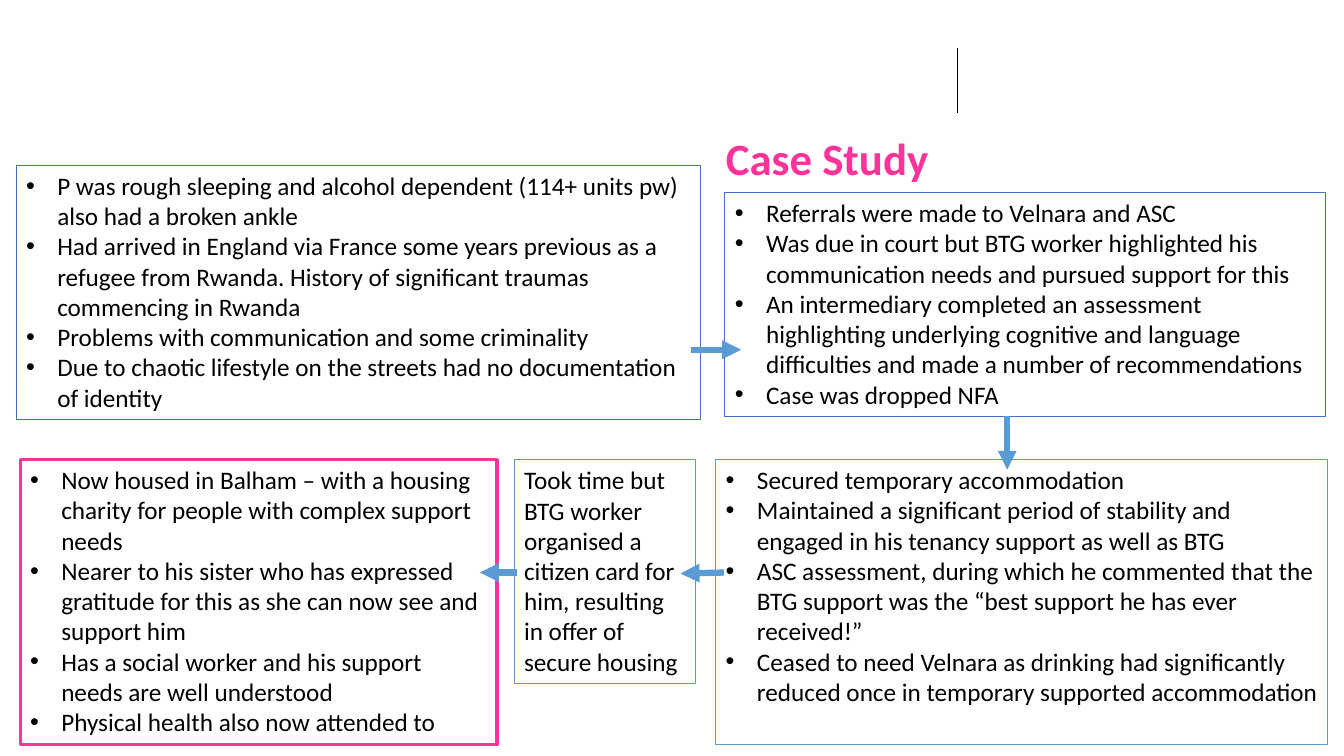
from lxml import etree
from pptx import Presentation
from pptx.dml.color import RGBColor
from pptx.enum.shapes import MSO_CONNECTOR
from pptx.enum.text import MSO_ANCHOR, MSO_AUTO_SIZE, PP_ALIGN
from pptx.oxml.ns import qn
from pptx.util import Inches, Pt

STRAIGHT = MSO_CONNECTOR.STRAIGHT
TOP, LEFT = MSO_ANCHOR.TOP, PP_ALIGN.LEFT
NO_AUTOFIT = MSO_AUTO_SIZE.NONE

FONT = "Calibri"
PINK, BLUE, LIGHT_BLUE, BLACK = "FF3399", "4472C4", "5B9BD5", "000000"
BULLET_INDENT = 0.31
LOWER_TOP, LOWER_HEIGHT = 4.56, 2.83

TITLE = {"text": "Case Study", "at": (7.1, 1.25, 2.29, 0.64)}

STAGES = [
    {"at": (0.16, 1.64, 6.79, 2.52), "line": (BLUE, 0.75), "bullets": True, "text": [
        "P was rough sleeping and alcohol dependent (114+ units pw) also had a broken ankle",
        "Had arrived in England via France some years previous as a refugee from Rwanda. "
        "History of significant traumas commencing in Rwanda",
        "Problems with communication and some criminality",
        "Due to chaotic lifestyle on the streets had no documentation of identity",
    ]},
    {"at": (7.19, 1.91, 5.96, 2.22), "line": (BLUE, 0.75), "bullets": True, "text": [
        "Referrals were made to Velnara and ASC",
        "Was due in court but BTG worker highlighted his communication needs and pursued "
        "support for this",
        "An intermediary completed an assessment highlighting underlying cognitive and "
        "language difficulties and made a number of recommendations",
        "Case was dropped NFA",
    ]},
    {"at": (7.1, LOWER_TOP, 6.07, LOWER_HEIGHT), "line": (LIGHT_BLUE, 0.75), "bullets": True, "text": [
        "Secured temporary accommodation",
        "Maintained a significant period of stability and engaged in his tenancy support "
        "as well as BTG",
        "ASC assessment, during which he commented that the BTG support was the “best "
        "support he has ever received!”",
        "Ceased to need Velnara as drinking had significantly reduced once in temporary "
        "supported accommodation",
    ]},
    {"at": (5.1, LOWER_TOP, 1.8, 2.22), "line": (LIGHT_BLUE, 0.75), "bullets": False, "text": [
        "Took time but BTG worker organised a citizen card for him, resulting in offer of "
        "secure housing",
    ]},
    {"at": (0.2, LOWER_TOP, 4.73, LOWER_HEIGHT), "line": (PINK, 2.25), "bullets": True, "text": [
        "Now housed in Balham – with a housing charity for people with complex support needs",
        "Nearer to his sister who has expressed gratitude for this as she can now see and "
        "support him",
        "Has a social worker and his support needs are well understood",
        "Physical health also now attended to",
    ]},
]

HEADER_RULE = (9.5, 0.48, 9.5, 1.12)
ARROWS = [
    (6.85, 3.47, 7.35, 3.47),
    (9.99, 4.13, 9.99, 4.66),
    (7.18, 5.68, 6.75, 5.69),
    (5.13, 5.68, 4.76, 5.68),
]


def color(value):
    return RGBColor.from_string(value)


def apply_format(target, values):
    for name, value in values.items():
        setattr(target, name, value)


def format_font(font, size, value, bold=False):
    apply_format(font, {"name": FONT, "size": Pt(size), "bold": bold})
    font.color.rgb = color(value)


def format_line(line, value, width):
    line.color.rgb = color(value)
    line.width = Pt(width)


def add_bullet(paragraph):
    properties = paragraph._p.get_or_add_pPr()
    properties.set("marL", str(Inches(BULLET_INDENT)))
    properties.set("indent", str(-Inches(BULLET_INDENT)))
    etree.SubElement(properties, qn("a:buFont"), typeface="Arial")
    etree.SubElement(properties, qn("a:buChar"), char="•")


def add_title(slide):
    title = slide.shapes.title
    title.left, title.top, title.width, title.height = map(Inches, TITLE["at"])
    frame = title.text_frame
    frame.text = TITLE["text"]
    apply_format(frame, {"word_wrap": True, "auto_size": NO_AUTOFIT, "vertical_anchor": TOP})
    paragraph = frame.paragraphs[0]
    paragraph.alignment = LEFT
    format_font(paragraph.runs[0].font, 32, PINK, bold=True)


def add_stage(slide, stage):
    box = slide.shapes.add_textbox(*map(Inches, stage["at"]))
    format_line(box.line, *stage["line"])
    frame = box.text_frame
    frame.word_wrap = True
    for index, text in enumerate(stage["text"]):
        paragraph = frame.add_paragraph() if index else frame.paragraphs[0]
        if stage["bullets"]:
            add_bullet(paragraph)
        run = paragraph.add_run()
        run.text = text
        format_font(run.font, 18, BLACK)


def add_line(slide, ends, value, width, arrow=False):
    connector = slide.shapes.add_connector(STRAIGHT, *map(Inches, ends))
    format_line(connector.line, value, width)
    if arrow:
        etree.SubElement(connector.line._get_or_add_ln(), qn("a:tailEnd"), type="triangle")
    etree.SubElement(connector._element.spPr, qn("a:effectLst"))


def main():
    presentation = Presentation()
    presentation.slide_width = Inches(13.33)
    presentation.slide_height = Inches(7.5)
    slide = presentation.slides.add_slide(presentation.slide_layouts.get_by_name("Title Only"))
    add_line(slide, HEADER_RULE, BLACK, 0.5)
    add_title(slide)
    for stage in STAGES:
        add_stage(slide, stage)
    for ends in ARROWS:
        add_line(slide, ends, LIGHT_BLUE, 4.5, arrow=True)
    presentation.save("out.pptx")


if __name__ == "__main__":
    main()
